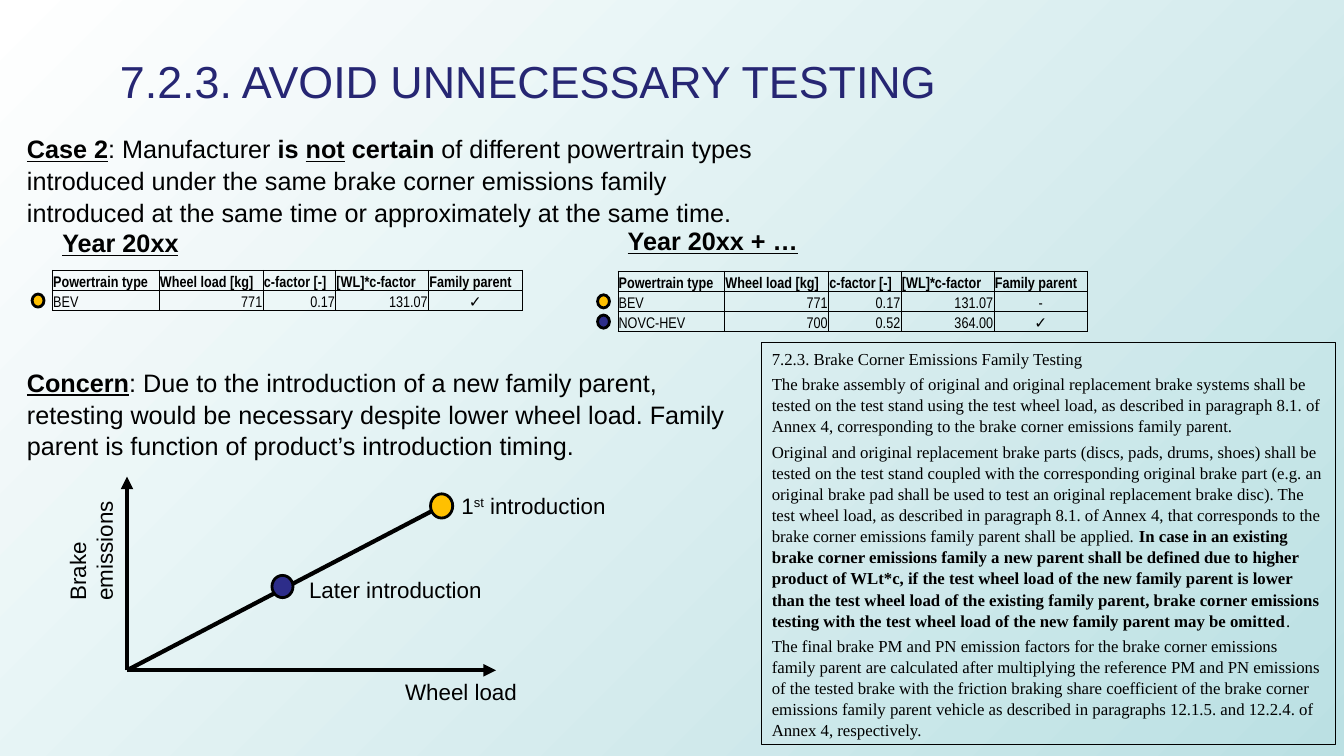
from lxml import etree
from pptx import Presentation
from pptx.dml.color import RGBColor
from pptx.enum.shapes import MSO_CONNECTOR, MSO_SHAPE
from pptx.enum.text import MSO_ANCHOR as ANCHOR, MSO_AUTO_SIZE as AUTO, PP_ALIGN as ALIGN
from pptx.oxml.ns import qn
from pptx.util import Cm, Pt

BLACK, NAVY, AMBER, TITLE = "000000", "2D2D8A", "FFC000", "262673"
BODY = dict(name="Arial", size=Pt(18))
LABEL = dict(name="Arial", size=Pt(16))
RULE = dict(name="Times New Roman", size=Pt(12))
CELL = dict(name="Arial Narrow", size=Pt(11))
BOLD = dict(bold=True)
HEAD = dict(bold=True, underline=True)

COLUMNS = [2.69, 2.62, 1.83, 2.34, 2.36]
ROW = 0.51
HEADER = ["Powertrain type", "Wheel load [kg]", "c-factor [-]", "[WL]*c-factor", "Family parent"]

CASE = [("Case 2", HEAD), (": Manufacturer ", {}), ("is ", BOLD), ("not", HEAD), (" certain ", BOLD),
        ("of different powertrain types introduced under the same brake corner emissions family "
         "introduced at the same time or approximately at the same time.", {})]
CONCERN = [("Concern", HEAD),
           (": Due to the introduction of a new family parent, retesting would be necessary despite "
            "lower wheel load. Family parent is function of product’s introduction timing.", {})]
RULES = [
    [("7.2.3. Brake Corner Emissions Family Testing", {})],
    [("The brake assembly of original and original replacement brake systems shall be tested on the "
      "test stand using the test wheel load, as described in paragraph 8.1. of Annex 4, corresponding "
      "to the brake corner emissions family parent.", {})],
    [("Original and original replacement brake parts (discs, pads, drums, shoes) shall be tested on the "
      "test stand coupled with the corresponding original brake part (e.g. an original brake pad shall "
      "be used to test an original replacement brake disc). The test wheel load, as described in "
      "paragraph 8.1. of Annex 4, that corresponds to the brake corner emissions family parent shall "
      "be applied. ", {}),
     ("In case in an existing brake corner emissions family a new parent shall be defined due to higher "
      "product of WLt*c, if the test wheel load of the new family parent is lower than the test wheel "
      "load of the existing family parent, brake corner emissions testing with the test wheel load of "
      "the new family parent may be omitted", BOLD),
     (".", {})],
    [("The final brake PM and PN emission factors for the brake corner emissions family parent are "
      "calculated after multiplying the reference PM and PN emissions of the tested brake with the "
      "friction braking share coefficient of the brake corner emissions family parent vehicle as "
      "described in paragraphs 12.1.5. and 12.2.4. of Annex 4, respectively.", {})],
]


def rgb(color):
    return RGBColor.from_string(color)


def add_run(p, text, color=BLACK, baseline=None, **font):
    r = p.add_run()
    r.text = text
    r.font.color.rgb = rgb(color)
    for key, value in font.items():
        setattr(r.font, key, value)
    if baseline:
        r._r.get_or_add_rPr().set("baseline", str(baseline))


def add_text(slide, box, paragraphs, font, spacing=None, gap=0):
    """Add a text box; each paragraph is a list of (text, format) runs."""
    sp = slide.shapes.add_textbox(*map(Cm, box))
    tf = sp.text_frame
    tf.word_wrap = True
    for i, runs in enumerate(paragraphs):
        p = tf.add_paragraph() if i else tf.paragraphs[0]
        p.space_before = Pt(gap if i else 0)
        if spacing:
            p.line_spacing = spacing
        for text, fmt in runs:
            add_run(p, text, **{**font, **fmt})
    return sp


def add_dot(slide, cx, cy, width, height, color):
    sp = slide.shapes.add_shape(MSO_SHAPE.OVAL, Cm(cx - width / 2), Cm(cy - height / 2),
                                Cm(width), Cm(height))
    sp.shadow.inherit = False
    sp.fill.solid()
    sp.fill.fore_color.rgb = rgb(color)
    sp.line.color.rgb = rgb(BLACK)
    sp.line.width = Pt(2)


def add_line(slide, start, end, arrow=False):
    line = slide.shapes.add_connector(MSO_CONNECTOR.STRAIGHT, *map(Cm, (*start, *end)))
    line.line.color.rgb = rgb(BLACK)
    line.line.width = Pt(3)
    if arrow:
        etree.SubElement(line.line._get_or_add_ln(), qn("a:tailEnd"), type="triangle")
    etree.SubElement(line._element.spPr, qn("a:effectLst"))


def format_cell(cell, text, align, bold):
    for side in ("left", "right", "top"):
        setattr(cell, f"margin_{side}", Cm(0.02))
    cell.margin_bottom = 0
    cell.vertical_anchor = ANCHOR.BOTTOM
    p = cell.text_frame.paragraphs[0]
    p.alignment = align
    add_run(p, text, bold=bold, **CELL)
    tcPr = cell._tc.get_or_add_tcPr()
    for side in ("lnL", "lnR", "lnT", "lnB"):
        ln = etree.SubElement(tcPr, qn(f"a:{side}"), w=str(Pt(0.5)))
        fill = etree.SubElement(ln, qn("a:solidFill"))
        etree.SubElement(fill, qn("a:srgbClr"), val=BLACK)
    cell.fill.background()


def add_year(slide, left, top, heading_top, heading, rows, colors):
    """Add a heading, its table at (left, top), and a dot before each data row."""
    add_text(slide, (left, heading_top, 6.1, 1.02), [[(heading, HEAD)]], BODY)
    grid = [HEADER, *rows]
    table = slide.shapes.add_table(len(grid), len(HEADER), Cm(left), Cm(top),
                                   Cm(sum(COLUMNS)), Cm(ROW * len(grid))).table
    table.first_row = table.horz_banding = False
    for column, width in zip(table.columns, COLUMNS):
        column.width = Cm(width)
    aligns = [ALIGN.LEFT, ALIGN.RIGHT, ALIGN.RIGHT, ALIGN.RIGHT, ALIGN.CENTER]
    for i, values in enumerate(grid):
        table.rows[i].height = Cm(ROW)
        for j, value in enumerate(values):
            format_cell(table.cell(i, j), value, aligns[j] if i else ALIGN.LEFT, i == 0)
    for i, color in enumerate(colors, 1):
        add_dot(slide, left - 0.36, top + ROW * (i + 0.5), 0.3, 0.33, color)


def add_emissions_plot(slide, left, top, width, height):
    origin = (left, top + height)
    first = (left + 7.93, top + 0.74)
    later = (left + 3.92, top + 2.77)
    add_line(slide, origin, (left, top), arrow=True)
    add_line(slide, origin, (left + width, top + height), arrow=True)
    add_line(slide, origin, first)
    add_dot(slide, *later, 0.53, 0.56, NAVY)
    add_dot(slide, *first, 0.56, 0.61, AMBER)
    sp = add_text(slide, (left - 3.05, top + 0.41, 4.29, 1.63), [[("Brake emissions", {})]], LABEL)
    sp.rotation = 270
    labels = [
        (6.76, height + 0.08, 4.7, [("Wheel load", {})]),
        (8.18, 0.26, 4.42, [("1", {}), ("st", dict(baseline=30000)), (" introduction", {})]),
        (4.34, 2.39, 5.38, [("Later introduction", {})]),
    ]
    for dx, dy, label_width, runs in labels:
        add_text(slide, (left + dx, top + dy, label_width, 0.94), [runs], LABEL)


def add_title(slide, left, top, width, height):
    sp = slide.shapes.title
    sp.left, sp.top, sp.width, sp.height = map(Cm, (left, top, width, height))
    tf = sp.text_frame
    tf.auto_size = AUTO.NONE
    tf.vertical_anchor = ANCHOR.TOP
    p = tf.paragraphs[0]
    p.alignment = ALIGN.LEFT
    add_run(p, "7.2.3. AVOID UNNECESSARY TESTING", TITLE, name="Arial", size=Pt(32))


def add_rules(slide, box):
    sp = add_text(slide, box, RULES, RULE, spacing=1.05, gap=2.8)
    sp.line.color.rgb = rgb(BLACK)
    sp.line.width = Pt(0.75)


def set_background(slide):
    fill = slide.background.fill
    fill.gradient()
    fill.gradient_angle = 315
    for stop, position, color in zip(fill.gradient_stops, (0, 1), ("FFFFFF", "BBE0E3")):
        stop.position = position
        stop.color.rgb = rgb(color)


def main():
    prs = Presentation()
    prs.slide_width, prs.slide_height = Cm(33.87), Cm(19.05)
    slide = prs.slides.add_slide(prs.slide_layouts[5])
    set_background(slide)
    add_title(slide, 2.77, 1.22, 30.3, 1.98)
    add_text(slide, (0.43, 3.2, 18.77, 2.57), [CASE], BODY, spacing=1.05)
    bev = ["BEV", "771", "0.17", "131.07"]
    add_year(slide, 1.32, 6.81, 5.61, "Year 20xx", [[*bev, "✓"]], [AMBER])
    add_year(slide, 15.57, 6.83, 5.56, "Year 20xx + …",
             [[*bev, "-"], ["NOVC-HEV", "700", "0.52", "364.00", "✓"]], [AMBER, NAVY])
    add_text(slide, (0.43, 9.09, 18.21, 2.57), [CONCERN], BODY, spacing=1.05)
    add_emissions_plot(slide, 3.2, 12.01, 9.3, 4.88)
    add_rules(slide, (19.2, 8.64, 14.45, 10.13))
    prs.save("out.pptx")


if __name__ == "__main__":
    main()
